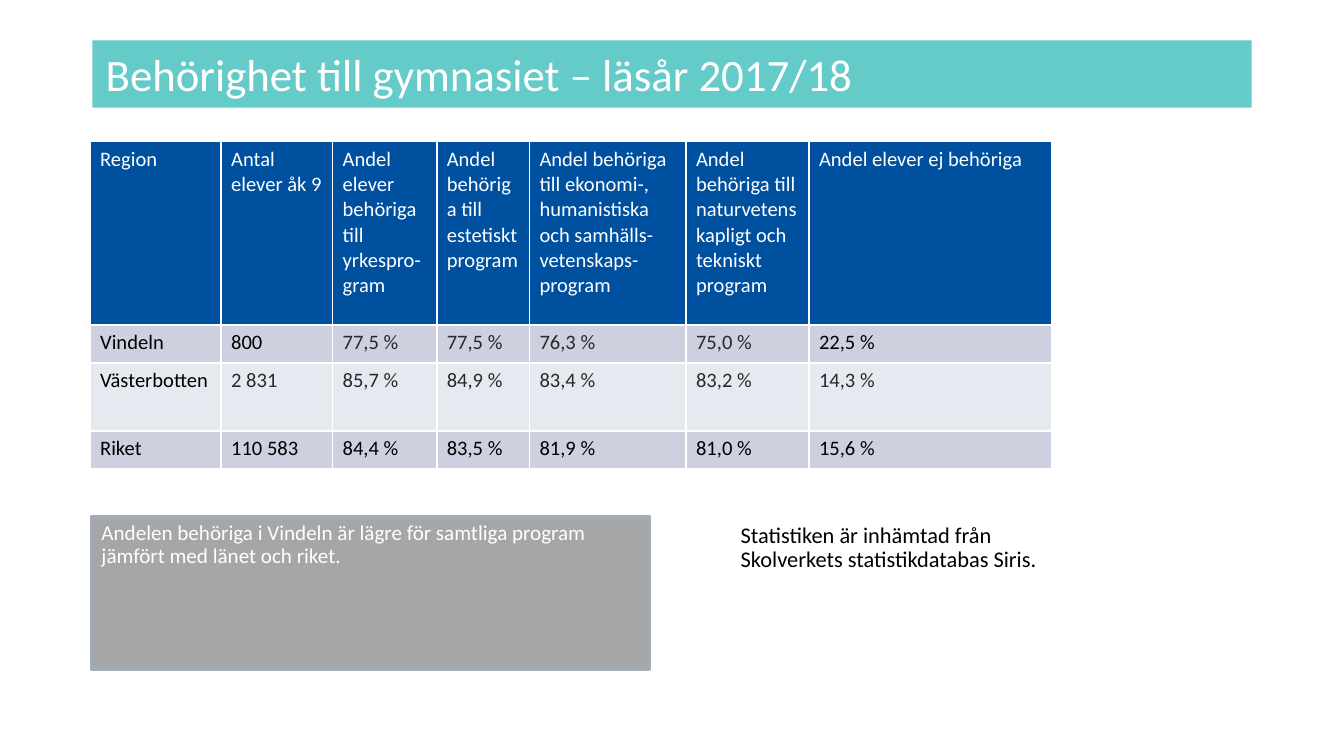
"""Build the slide on upper-secondary eligibility for the school year 2017/18."""
from dataclasses import dataclass

from lxml.etree import SubElement
from pptx import Presentation
from pptx.dml.color import RGBColor
from pptx.enum.shapes import MSO_SHAPE
from pptx.enum.text import MSO_ANCHOR, PP_ALIGN
from pptx.oxml.ns import qn
from pptx.util import Inches, Pt


@dataclass(frozen=True)
class Theme:
    font: str = "Calibri"
    white: str = "FFFFFF"
    black: str = "000000"
    soft: str = "292929"
    teal: str = "64CBC9"
    blue: str = "0050A0"
    band_dark: str = "CCD0DF"
    band_light: str = "E7E9F0"
    grey: str = "A6A6A6"
    edge: str = "A3ABB6"
    title_size: float = 24
    note_size: float = 12
    comment_size: float = 11.3
    table_size: float = 11
    side_margin: float = 5.4
    end_margin: float = 2.7


theme = Theme()
deck = Presentation()
deck.slide_width = Inches(10)
deck.slide_height = deck.slide_width * 9 // 16
slide = deck.slides.add_slide(deck.slide_layouts[6])


def share(left, top, width, height):
    """Turn percentages of the slide into a position and a size."""
    across, down = deck.slide_width / 100, deck.slide_height / 100
    return round(left * across), round(top * down), round(width * across), round(height * down)


def write(frame, text, size, color, spacing=None):
    """Put one left-aligned run in a wrapping text frame."""
    frame.word_wrap = True
    paragraph = frame.paragraphs[0]
    paragraph.alignment = PP_ALIGN.LEFT
    paragraph.line_spacing = spacing
    run = paragraph.add_run()
    run.text = text
    run.font.name = theme.font
    run.font.size = Pt(size)
    run.font.color.rgb = RGBColor.from_string(color)


heading = slide.shapes.add_shape(MSO_SHAPE.RECTANGLE, *share(6.88, 5.34, 86.24, 8.9))
heading.shadow.inherit = False
heading.fill.solid()
heading.fill.fore_color.rgb = RGBColor.from_string(theme.teal)
heading.line.fill.background()
heading.text_frame.vertical_anchor = MSO_ANCHOR.MIDDLE
write(heading.text_frame, "Behörighet till gymnasiet – läsår 2017/18", theme.title_size, theme.white)

source_note = slide.shapes.add_textbox(*share(54.13, 68.4, 24.2, 13.2))
write(source_note.text_frame, "Statistiken är inhämtad från Skolverkets statistikdatabas Siris.",
      theme.note_size, theme.black, 0.9)

eligibility = [
    ["Region", "Antal elever åk 9", "Andel elever behöriga till yrkespro-gram",
     "Andel behöriga till estetiskt program",
     "Andel behöriga till ekonomi-, humanistiska och samhälls-vetenskaps-program",
     "Andel behöriga till naturvetenskapligt och tekniskt program", "Andel elever ej behöriga"],
    ["Vindeln", "800", "77,5 %", "77,5 %", "76,3 %", "75,0 %", "22,5 %"],
    ["Västerbotten", "2 831", "85,7 %", "84,9 %", "83,4 %", "83,2 %", "14,3 %"],
    ["Riket", "110 583", "84,4 %", "83,5 %", "81,9 %", "81,0 %", "15,6 %"],
]
column_shares = [9.75, 8.3, 7.75, 6.9, 11.65, 9.15, 18.1]
row_shares = [24.3, 5, 9, 5]
row_fills = [theme.blue, theme.band_dark, theme.band_light, theme.band_dark]
soft_columns = {1: range(2, 6), 2: range(1, 7)}

table = slide.shapes.add_table(
    len(row_shares), len(column_shares),
    *share(6.7, 18.7, sum(column_shares), sum(row_shares))).table
for column, width in zip(table.columns, column_shares):
    column.width = round(deck.slide_width * width / 100)
for row, height in zip(table.rows, row_shares):
    row.height = round(deck.slide_height * height / 100)

for r, values in enumerate(eligibility):
    for c, value in enumerate(values):
        cell = table.cell(r, c)
        cell.margin_left = cell.margin_right = Pt(theme.side_margin)
        cell.margin_top = cell.margin_bottom = Pt(theme.end_margin)
        color = theme.white if r == 0 else theme.soft if c in soft_columns.get(r, ()) else theme.black
        write(cell.text_frame, value, theme.table_size, color)
        properties = cell._tc.get_or_add_tcPr()
        for side in ("a:lnL", "a:lnR", "a:lnT", "a:lnB"):
            border = SubElement(properties, qn(side), w=str(Pt(1)))
            SubElement(SubElement(border, qn("a:solidFill")), qn("a:srgbClr"), val=theme.white)
        cell.fill.solid()
        cell.fill.fore_color.rgb = RGBColor.from_string(row_fills[r])

comment = slide.shapes.add_shape(MSO_SHAPE.RECTANGLE, *share(6.8, 68.4, 41.5, 20.1))
comment.shadow.inherit = False
comment.fill.solid()
comment.fill.fore_color.rgb = RGBColor.from_string(theme.grey)
comment.line.color.rgb = RGBColor.from_string(theme.edge)
comment.line.width = Pt(2)
comment.text_frame.vertical_anchor = MSO_ANCHOR.TOP
comment.text_frame.margin_left = comment.text_frame.margin_right = Pt(theme.side_margin)
comment.text_frame.margin_top = comment.text_frame.margin_bottom = Pt(theme.end_margin)
write(comment.text_frame,
      "Andelen behöriga i Vindeln är lägre för samtliga program jämfört med länet och riket.",
      theme.comment_size, theme.white, 0.9)

deck.save("out.pptx")
